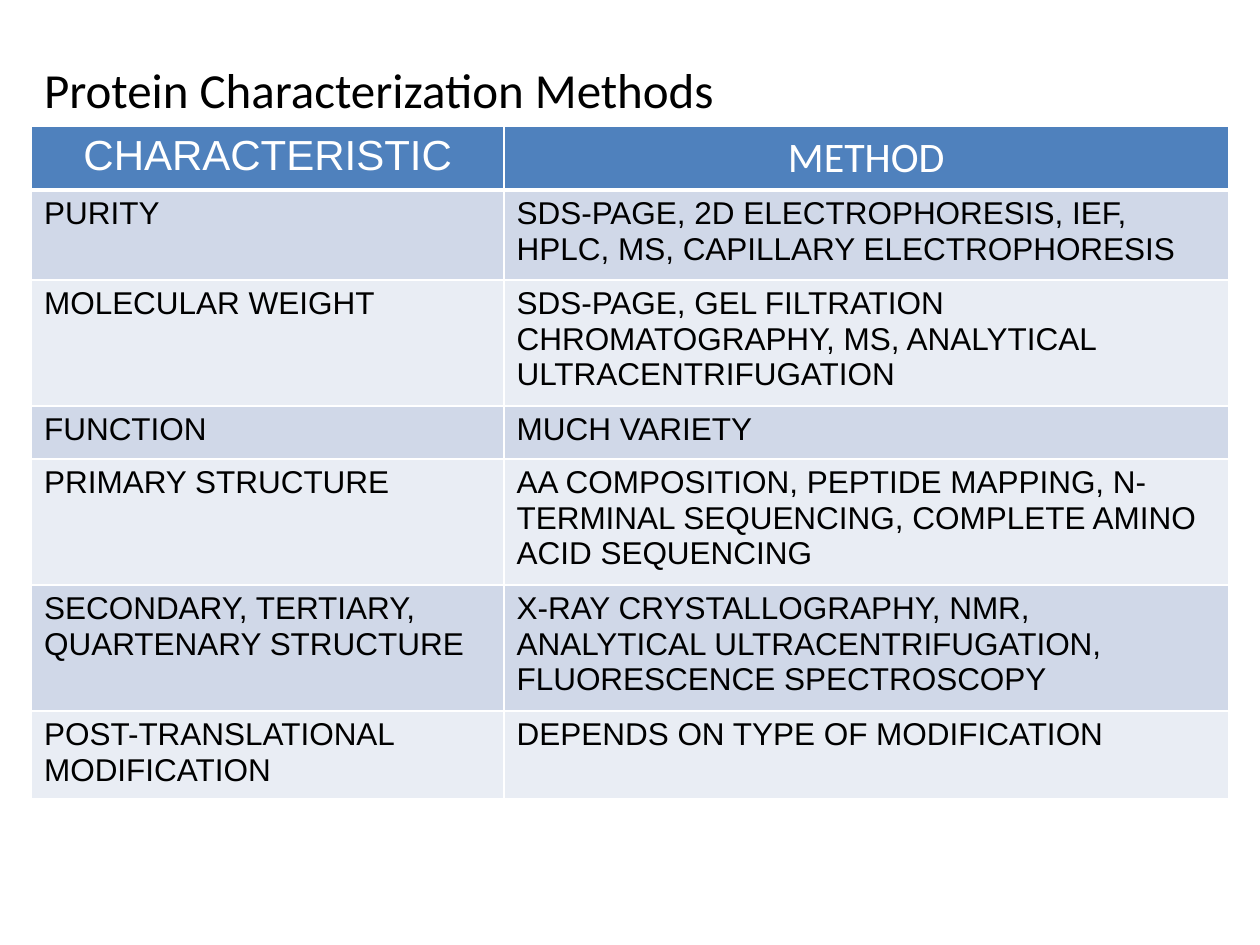
from dataclasses import dataclass

import pptx
import pptx.dml.color
import pptx.enum.text
import pptx.oxml.ns
import pptx.util
from lxml import etree

PP_ALIGN = pptx.enum.text.PP_ALIGN


@dataclass(frozen=True)
class Theme:
    ink: str = "000000"
    paper: str = "FFFFFF"
    header: str = "4F81BD"
    bands: tuple = ("D0D8E8", "E9EDF4")
    heading_font: str = "Calibri"
    body_font: str = "Arial"
    title_size: int = 28
    header_size: int = 24
    body_size: int = 18
    thin: int = 1
    thick: int = 3


class SlideBuilder:
    """Places elements on a grid of quarter-inch columns and rows."""

    UNIT = 0.25

    def __init__(self, prs, theme):
        self.theme = theme
        self.slide = prs.slides.add_slide(prs.slide_layouts[5])

    def length(self, units):
        return pptx.util.Inches(units * self.UNIT)

    def add_run(self, p, text, font, size, color):
        r = p.add_run()
        r.text = text
        r.font.name = font
        r.font.size = pptx.util.Pt(size)
        r.font.bold = False
        r.font.color.rgb = pptx.dml.color.RGBColor.from_string(color)

    def title(self, text, col, row, cols, rows):
        sp = self.slide.shapes.title
        sp.left, sp.top = self.length(col), self.length(row)
        sp.width, sp.height = self.length(cols), self.length(rows)
        tf = sp.text_frame
        tf.word_wrap = True
        tf.vertical_anchor = pptx.enum.text.MSO_ANCHOR.TOP
        p = tf.paragraphs[0]
        p.alignment = PP_ALIGN.LEFT
        self.add_run(p, text, self.theme.heading_font,
                     self.theme.title_size, self.theme.ink)

    def borders(self, cell, bottom, top):
        tc_pr = cell._tc.get_or_add_tcPr()
        widths = {"lnL": self.theme.thin, "lnR": self.theme.thin,
                  "lnT": top, "lnB": bottom}
        for side, width in widths.items():
            ln = etree.SubElement(tc_pr, pptx.oxml.ns.qn(f"a:{side}"),
                                  w=str(pptx.util.Pt(width)))
            fill = etree.SubElement(ln, pptx.oxml.ns.qn("a:solidFill"))
            etree.SubElement(fill, pptx.oxml.ns.qn("a:srgbClr"),
                             val=self.theme.paper)

    def cell(self, cell, text, fill, font, size, color, align,
             bottom, top):
        self.borders(cell, bottom, top)
        cell.fill.solid()
        cell.fill.fore_color.rgb = pptx.dml.color.RGBColor.from_string(fill)
        p = cell.text_frame.paragraphs[0]
        p.alignment = align
        self.add_run(p, text, font, size, color)

    def table(self, header, rows, col, row, col_widths, row_heights):
        t = self.theme
        table = self.slide.shapes.add_table(
            len(row_heights), len(col_widths),
            self.length(col), self.length(row),
            self.length(sum(col_widths)),
            self.length(sum(row_heights))).table
        for column, width in zip(table.columns, col_widths):
            column.width = self.length(width)
        for table_row, height in zip(table.rows, row_heights):
            table_row.height = self.length(height)
        for c, (text, font) in enumerate(header):
            self.cell(table.cell(0, c), text, t.header, font, t.header_size,
                      t.paper, PP_ALIGN.CENTER, t.thick, t.thin)
        for i, texts in enumerate(rows):
            top = t.thin if i else t.thick
            for c, text in enumerate(texts):
                self.cell(table.cell(i + 1, c), text, t.bands[i % 2],
                          t.body_font, t.body_size, t.ink, PP_ALIGN.LEFT,
                          t.thin, top)


METHODS = [
    ("PURITY",
     "SDS-PAGE, 2D ELECTROPHORESIS, IEF, HPLC, MS, "
     "CAPILLARY ELECTROPHORESIS"),
    ("MOLECULAR WEIGHT",
     "SDS-PAGE, GEL FILTRATION CHROMATOGRAPHY, MS, "
     "ANALYTICAL ULTRACENTRIFUGATION"),
    ("FUNCTION", "MUCH VARIETY"),
    ("PRIMARY STRUCTURE",
     "AA COMPOSITION, PEPTIDE MAPPING, N-TERMINAL SEQUENCING, "
     "COMPLETE AMINO ACID SEQUENCING"),
    ("SECONDARY, TERTIARY, QUARTENARY STRUCTURE",
     "X-RAY CRYSTALLOGRAPHY, NMR, ANALYTICAL ULTRACENTRIFUGATION, "
     "FLUORESCENCE SPECTROSCOPY"),
    ("POST-TRANSLATIONAL MODIFICATION", "DEPENDS ON TYPE OF MODIFICATION"),
]


def main():
    prs = pptx.Presentation()
    prs.slide_width = pptx.util.Inches(10)
    prs.slide_height = pptx.util.Inches(7.5)
    theme = Theme()
    builder = SlideBuilder(prs, theme)
    builder.title("Protein Characterization Methods",
                  col=1, row=1.68, cols=24, rows=2.28)
    header = [("CHARACTERISTIC", theme.body_font),
              ("METHOD", theme.heading_font)]
    builder.table(header, METHODS, col=1, row=4, col_widths=(15, 23),
                  row_heights=(2, 2.86, 4, 1.68, 4, 4, 2.8))
    prs.save("out.pptx")


if __name__ == "__main__":
    main()
